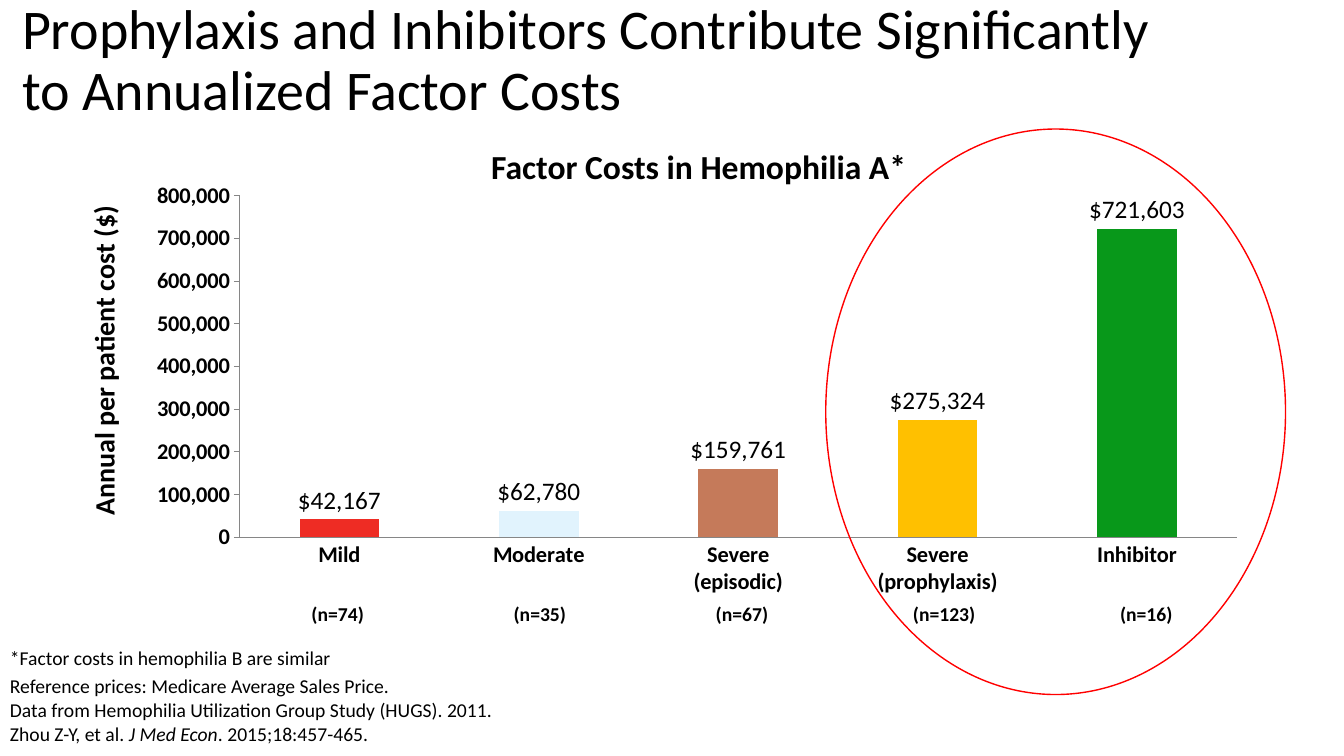
import pptx
import pptx.chart.data
import pptx.dml.color
import pptx.enum.chart
import pptx.enum.shapes
import pptx.enum.text
import pptx.oxml
import pptx.oxml.ns
import pptx.util

COLORS = {
    "text": "000000", "axis": "868686", "highlight": "FF0000",
    "Mild": "EE2C24", "Moderate": "E1F3FD", "Severe\n(episodic)": "C57A5A",
    "Severe\n(prophylaxis)": "FFC000", "Inhibitor": "08981A",
}
COSTS = {
    "Mild": 42167, "Moderate": 62780, "Severe\n(episodic)": 159761,
    "Severe\n(prophylaxis)": 275324, "Inhibitor": 721603,
}
PATIENTS = [74, 35, 67, 123, 16]

deck = pptx.Presentation()
deck.slide_width = pptx.util.Inches(13.33)
deck.slide_height = pptx.util.Inches(7.5)
slide = deck.slides.add_slide(deck.slide_layouts[6])
align = pptx.enum.text.PP_ALIGN
anchor = pptx.enum.text.MSO_ANCHOR


def place(left, top, width, height):
    """Turn percentages of the slide's width and height into lengths."""
    return [int(share * side / 100) for share, side in zip(
        (left, top, width, height), (deck.slide_width, deck.slide_height) * 2)]


def add_text(area, lines, size, bold=False, alignment=align.LEFT, wrap=False):
    """Add a text box; each line is a list of (words, italic) pairs."""
    box = slide.shapes.add_textbox(*place(*area))
    box.text_frame.word_wrap = wrap
    for number, line in enumerate(lines):
        paragraph = box.text_frame.paragraphs[0] if number == 0 else box.text_frame.add_paragraph()
        paragraph.alignment = alignment
        for words, italic in line:
            run = paragraph.add_run()
            run.text = words
            look = {"name": "Calibri", "size": pptx.util.Pt(size), "bold": bold, "italic": italic}
            for key, value in look.items():
                setattr(run.font, key, value)
            run.font.color.rgb = pptx.dml.color.RGBColor.from_string(COLORS["text"])
    return box


headline = add_text(
    (0.9, 1.47, 88.75, 13.47),
    [[("Prophylaxis and Inhibitors Contribute Significantly to Annualized Factor Costs", False)]],
    40, wrap=True)
headline.text_frame.vertical_anchor = anchor.MIDDLE
headline.text_frame.paragraphs[0].line_spacing = 0.9

# Cost chart
cost_data = pptx.chart.data.CategoryChartData(number_format="#,##0")
cost_data.categories = list(COSTS)
cost_data.add_series("Series 1", list(COSTS.values()))
cost_chart = slide.shapes.add_chart(
    pptx.enum.chart.XL_CHART_TYPE.COLUMN_CLUSTERED,
    *place(10.05, 22.93, 83.72, 57.07), cost_data).chart
cost_chart.has_legend = False
cost_chart.has_title = False
for key, value in {"name": "Calibri", "size": pptx.util.Pt(16), "bold": True}.items():
    setattr(cost_chart.font, key, value)
cost_chart.font.color.rgb = pptx.dml.color.RGBColor.from_string(COLORS["text"])

ticks = pptx.enum.chart.XL_TICK_MARK
axis_formats = [
    (cost_chart.category_axis, {"major_tick_mark": ticks.NONE, "has_major_gridlines": False}),
    (cost_chart.value_axis, {
        "major_tick_mark": ticks.OUTSIDE, "has_major_gridlines": False,
        "minimum_scale": 0, "maximum_scale": 800000, "major_unit": 100000}),
]
for axis, axis_format in axis_formats:
    for key, value in axis_format.items():
        setattr(axis, key, value)
    axis.format.line.color.rgb = pptx.dml.color.RGBColor.from_string(COLORS["axis"])
    axis.format.line.width = pptx.util.Pt(0.75)
cost_chart.value_axis.tick_labels.number_format = "#,##0"
cost_chart.value_axis.tick_labels.number_format_is_linked = False

columns = cost_chart.plots[0]
columns.gap_width = 150
columns.vary_by_categories = False
for number, severity in enumerate(COSTS):
    fill = columns.series[0].points[number].format.fill
    fill.solid()
    fill.fore_color.rgb = pptx.dml.color.RGBColor.from_string(COLORS[severity])

columns.has_data_labels = True
label_format = {
    "show_value": True, "number_format": '"$"#,##0', "number_format_is_linked": False,
    "position": pptx.enum.chart.XL_LABEL_POSITION.OUTSIDE_END,
}
for key, value in label_format.items():
    setattr(columns.data_labels, key, value)
for key, value in {"name": "Calibri", "size": pptx.util.Pt(18), "bold": False}.items():
    setattr(columns.data_labels.font, key, value)
columns.data_labels.font.color.rgb = pptx.dml.color.RGBColor.from_string(COLORS["text"])

# Fix the plot's inner area, in shares of the chart
qn = pptx.oxml.ns.qn
plot_area = cost_chart.element.find(".//" + qn("c:plotArea"))
for automatic in plot_area.findall(qn("c:layout")):
    plot_area.remove(automatic)
inner_area = "".join(f'<c:{key} val="{value}"/>' for key, value in {
    "layoutTarget": "inner", "xMode": "edge", "yMode": "edge",
    "x": 0.093, "y": 0.052, "w": 0.886, "h": 0.792}.items())
plot_area.insert(0, pptx.oxml.parse_xml(
    f"<c:layout {pptx.oxml.ns.nsdecls('c')}>"
    f"<c:manualLayout>{inner_area}</c:manualLayout></c:layout>"))

# Captions around the chart
references = add_text((0, 87.87, 46.06, 12.13), [
    [("Reference prices: Medicare Average Sales Price.", False)],
    [("Data from Hemophilia Utilization Group Study (HUGS). 2011.", False)],
    [("Zhou Z-Y, et al. ", False), ("J Med Econ", True), (". 2015;18:457-465.", False)],
], 14, wrap=True)
references.text_frame.margin_top = references.text_frame.margin_bottom = pptx.util.Inches(0.1)

add_text((35.63, 18.67, 32.71, 6.67), [[("Factor Costs in Hemophilia A*", False)]],
         24, True, align.CENTER)
cost_caption = add_text((-4.65, 44.8, 24.76, 5.87), [[("Annual per patient cost ($)", False)]],
                        20, True, align.CENTER)
cost_caption.rotation = 270

first_center, column_step, count_width = 25.13, 15.04, 7.5
for column, count in enumerate(PATIENTS):
    left = first_center + column * column_step - count_width / 2
    add_text((left, 78.93, count_width, 4.53), [[(f"(n={count})", False)]],
             14, True, align.CENTER)

highlight = slide.shapes.add_shape(
    pptx.enum.shapes.MSO_SHAPE.OVAL, *place(61.44, 17.07, 34.21, 74.8))
highlight.shadow.inherit = False
highlight.fill.background()
highlight.line.color.rgb = pptx.dml.color.RGBColor.from_string(COLORS["highlight"])
highlight.line.width = pptx.util.Pt(1)

add_text((0, 84.8, 25.58, 4.53), [[("*Factor costs in hemophilia B are similar", False)]], 14)

deck.save("out.pptx")
